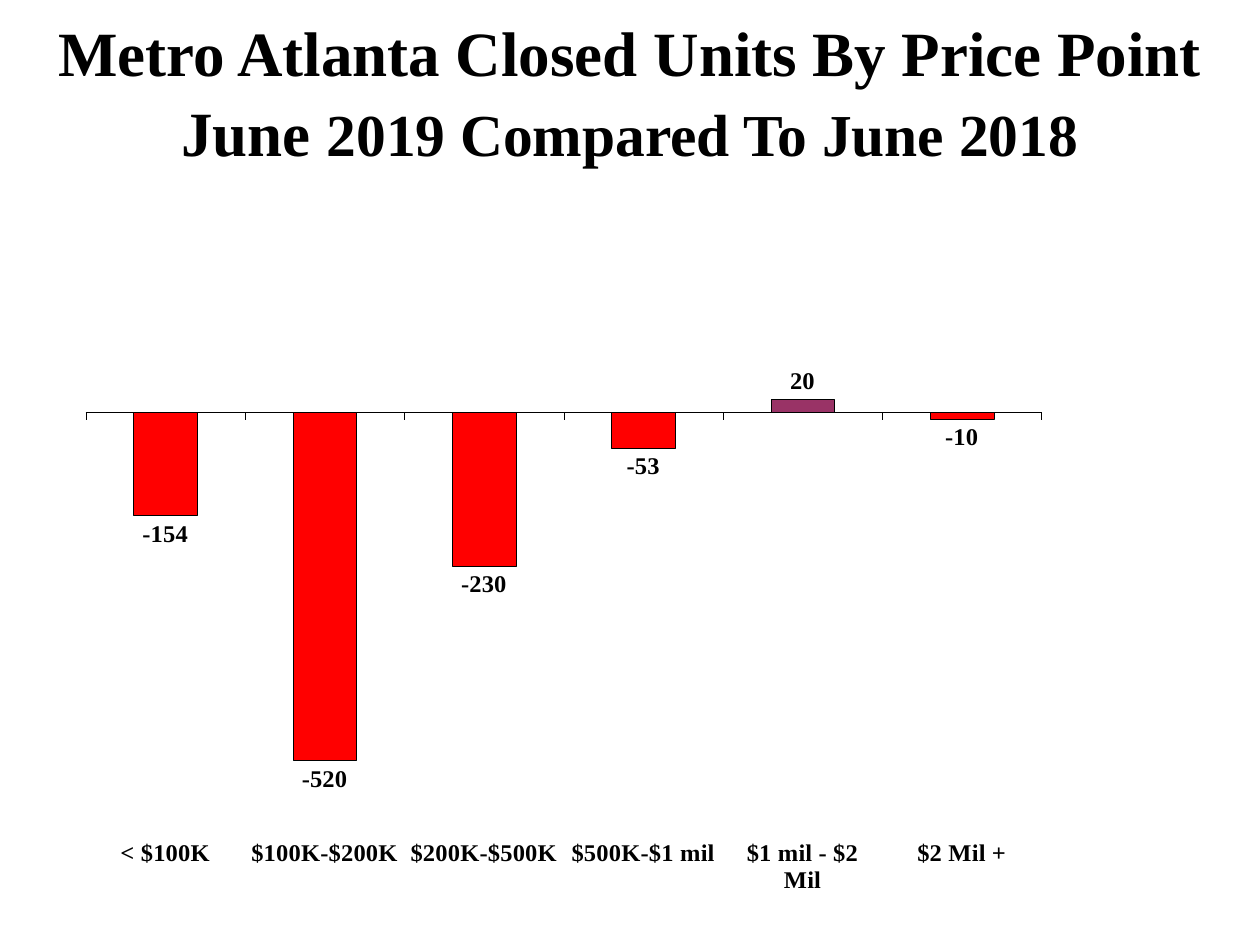
from dataclasses import dataclass

from pptx import Presentation
from pptx.chart.data import CategoryChartData
from pptx.dml.color import RGBColor
from pptx.enum.chart import (XL_CHART_TYPE, XL_LABEL_POSITION, XL_TICK_LABEL_POSITION,
                             XL_TICK_MARK)
from pptx.enum.text import MSO_ANCHOR, MSO_AUTO_SIZE, PP_ALIGN
from pptx.oxml import parse_xml
from pptx.oxml.ns import nsdecls
from pptx.util import Inches, Pt

COLUMNS = XL_CHART_TYPE.COLUMN_CLUSTERED
OUTSIDE_END = XL_LABEL_POSITION.OUTSIDE_END
LABELS_LOW = XL_TICK_LABEL_POSITION.LOW
TICK_OUT = XL_TICK_MARK.OUTSIDE
TITLE_ONLY = 5


@dataclass(frozen=True)
class Theme:
    font: str = "Times New Roman"
    ink: RGBColor = RGBColor(0x00, 0x00, 0x00)
    gain: RGBColor = RGBColor(0x99, 0x33, 0x66)
    loss: RGBColor = RGBColor(0xFF, 0x00, 0x00)
    headline: Pt = Pt(36)
    period: Pt = Pt(34)
    chart_text: Pt = Pt(14)
    hairline: Pt = Pt(0.06)


@dataclass(frozen=True)
class PricePoint:
    label: str
    change: int


THEME = Theme()
PRICE_POINTS = [
    PricePoint("< $100K", -154),
    PricePoint("$100K-$200K", -520),
    PricePoint("$200K-$500K", -230),
    PricePoint("$500K-$1 mil", -53),
    PricePoint("$1 mil - $2 Mil", 20),
    PricePoint("$2 Mil +", -10),
]


def style_font(font, size: Pt) -> None:
    font.name = THEME.font
    font.size = size
    font.bold = True
    font.color.rgb = THEME.ink


def write_title(title) -> None:
    title.left, title.top = Inches(0), Inches(0.5)
    title.width, title.height = Inches(10), Inches(0.42)
    frame = title.text_frame
    frame.word_wrap = True
    frame.auto_size = MSO_AUTO_SIZE.NONE
    frame.vertical_anchor = MSO_ANCHOR.MIDDLE
    headline = frame.paragraphs[0]
    headline.text = "Metro Atlanta Closed Units By Price Point\vJune "
    headline.alignment = PP_ALIGN.CENTER
    headline.line_spacing = 1.05
    style_font(headline.font, THEME.headline)
    for run in headline.runs:
        style_font(run.font, THEME.headline)
    period = headline.add_run()
    period.text = "2019 Compared To June 2018"
    style_font(period.font, THEME.period)


def place_plot(chart, x: float, y: float, w: float, h: float) -> None:
    """Fix the inner plot area, in fractions of the chart."""
    plot_area = chart.plots[0]._element.getparent()
    for old_layout in plot_area.findall("{*}layout"):
        plot_area.remove(old_layout)
    plot_area.insert(0, parse_xml(
        f'<c:layout {nsdecls("c")}><c:manualLayout><c:layoutTarget val="inner"/>'
        f'<c:xMode val="edge"/><c:yMode val="edge"/><c:x val="{x}"/><c:y val="{y}"/>'
        f'<c:w val="{w}"/><c:h val="{h}"/></c:manualLayout></c:layout>'))


def add_change_chart(slide, price_points: list[PricePoint]) -> None:
    data = CategoryChartData(number_format="0")
    data.categories = [point.label for point in price_points]
    data.add_series("Series 1", [point.change for point in price_points])
    chart = slide.shapes.add_chart(COLUMNS, Inches(0.68), Inches(1.64),
                                   Inches(8.64), Inches(5.45), data).chart
    chart.has_legend = False
    chart.has_title = False
    style_font(chart.font, THEME.chart_text)
    place_plot(chart, 0, 0.212, 0.878, 0.713)

    # Axes
    price_axis, unit_axis = chart.category_axis, chart.value_axis
    price_axis.tick_label_position = LABELS_LOW
    price_axis.major_tick_mark = TICK_OUT
    price_axis.format.line.color.rgb = THEME.ink
    price_axis.format.line.width = THEME.hairline
    unit_axis.minimum_scale, unit_axis.maximum_scale = -620, 95
    unit_axis.has_major_gridlines = False
    unit_axis.visible = False

    # Columns and their labels
    plot = chart.plots[0]
    plot.gap_width = 150
    plot.vary_by_categories = False
    changes = plot.series[0]
    changes.invert_if_negative = False
    columns = [changes.format] + [changes.points[i].format
                                  for i in range(len(price_points))]
    colors = [THEME.gain] + [THEME.loss if point.change < 0 else THEME.gain
                             for point in price_points]
    for column, color in zip(columns, colors):
        column.fill.solid()
        column.fill.fore_color.rgb = color
        column.line.color.rgb = THEME.ink
        column.line.width = THEME.hairline
    labels = changes.data_labels
    labels.show_value = True
    labels.number_format = "0"
    labels.number_format_is_linked = False
    labels.position = OUTSIDE_END
    style_font(labels.font, THEME.chart_text)


def main() -> None:
    deck = Presentation()
    deck.slide_width, deck.slide_height = Inches(10), Inches(7.5)
    slide = deck.slides.add_slide(deck.slide_layouts[TITLE_ONLY])
    write_title(slide.shapes.title)
    add_change_chart(slide, PRICE_POINTS)
    deck.save("out.pptx")


if __name__ == "__main__":
    main()
